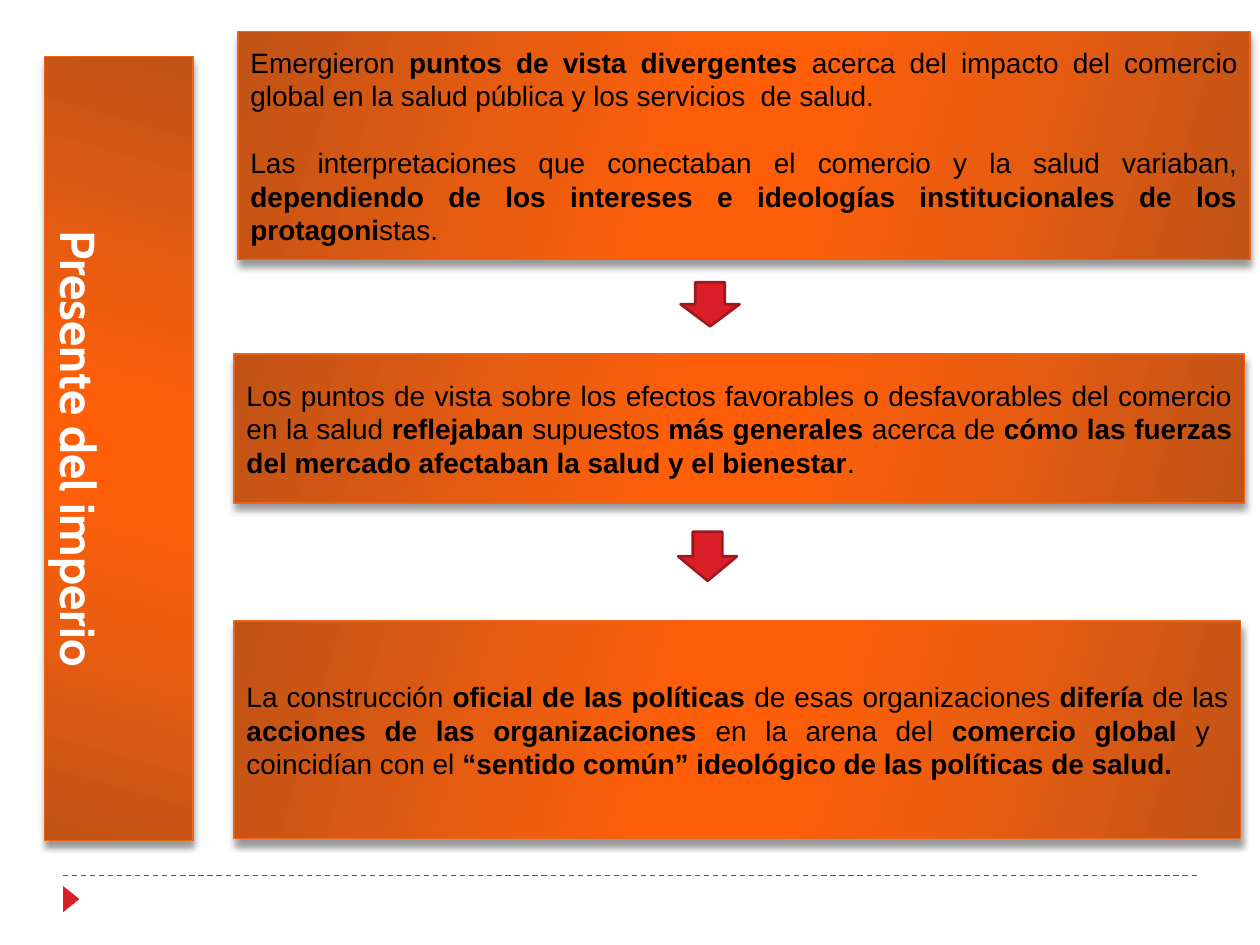
from lxml.etree import SubElement
from pptx import Presentation
from pptx.dml.color import RGBColor
from pptx.enum.dml import MSO_LINE
from pptx.enum.shapes import MSO_CONNECTOR, MSO_SHAPE
from pptx.enum.text import MSO_ANCHOR, MSO_AUTO_SIZE, PP_ALIGN
from pptx.oxml.ns import qn
from pptx.util import Cm, Pt

RED = "DA1F28"
DARK_RED = "A1171E"
ORANGE_EDGE = "EB641B"
ORANGE_STOPS = [(0, "C05216"), (30, "EA5D10"), (45, "FE5E08"),
                (55, "FE5E08"), (73, "EA5D10"), (100, "C05216")]

PANELS = [
    (4.8, 0.64, 20.4, 4.6, [
        "Emergieron **puntos de vista divergentes **acerca del impacto del comercio "
        "global en la salud pública y los servicios  de salud.",
        "Las interpretaciones que conectaban el comercio y la salud variaban, "
        "**dependiendo de los intereses e ideologías institucionales de los "
        "protagoni**stas.",
    ]),
    (4.72, 7.14, 20.37, 3, [
        "Los puntos de vista sobre los efectos favorables o desfavorables del comercio "
        "en la salud** reflejaban** supuestos **más generales **acerca de **cómo las "
        "fuerzas del mercado afectaban la salud y el bienestar**.",
    ]),
    (4.72, 12.52, 20.29, 4.39, [
        "La construcción **oficial de las políticas **de esas organizaciones "
        "**difería** de las **acciones de las organizaciones **en la arena del "
        "**comercio global **y  coincidían con el **“sentido común” ideológico de "
        "las políticas de salud.**",
    ]),
]
ARROWS = [(13.72, 5.69, 1.19, 0.89), (13.67, 10.72, 1.19, 0.99)]


def color(value):
    return RGBColor.from_string(value)


class SlideBuilder:
    def __init__(self, presentation):
        self.slide = presentation.slides.add_slide(presentation.slide_layouts[5])

    def format_run(self, run, font_name, size, font_color, bold):
        run.font.name = font_name
        run.font.size = Pt(size)
        run.font.color.rgb = color(font_color)
        run.font.bold = bold

    def style_orange(self, shape):
        shape.fill.gradient()
        shape.fill.gradient_angle = 344
        properties = shape._element.spPr
        stops = properties.find(qn("a:gradFill")).find(qn("a:gsLst"))
        stops.clear()
        for position, value in ORANGE_STOPS:
            stop = SubElement(stops, qn("a:gs"), pos=str(position * 1000))
            SubElement(stop, qn("a:srgbClr"), val=value)
        shape.line.color.rgb = color(ORANGE_EDGE)
        shape.line.width = Pt(0.75)
        shape.shadow.inherit = False
        shadow = SubElement(
            properties.find(qn("a:effectLst")), qn("a:outerShdw"),
            blurRad=str(Pt(4)), dist=str(Pt(3.4)), dir="5400000",
            algn="ctr", rotWithShape="0")
        shadow_color = SubElement(shadow, qn("a:srgbClr"), val="000000")
        SubElement(shadow_color, qn("a:alpha"), val="40000")

    def title(self, text, left, top, width, height):
        shape = self.slide.shapes.title
        shape.left, shape.top = Cm(left), Cm(top)
        shape.width, shape.height = Cm(width), Cm(height)
        shape.rotation = 90
        self.style_orange(shape)
        text_frame = shape.text_frame
        text_frame.text = text
        text_frame.auto_size = MSO_AUTO_SIZE.NONE
        text_frame.vertical_anchor = MSO_ANCHOR.BOTTOM
        paragraph = text_frame.paragraphs[0]
        paragraph.alignment = PP_ALIGN.CENTER
        self.format_run(paragraph.runs[0], "Cabin", 28, "FFFFFF", True)

    def panel(self, left, top, width, height, texts):
        shape = self.slide.shapes.add_shape(
            MSO_SHAPE.RECTANGLE, Cm(left), Cm(top), Cm(width), Cm(height))
        self.style_orange(shape)
        text_frame = shape.text_frame
        text_frame.word_wrap = True
        text_frame.vertical_anchor = MSO_ANCHOR.MIDDLE
        for number, text in enumerate(texts):
            paragraph = text_frame.add_paragraph() if number else text_frame.paragraphs[0]
            paragraph.alignment = PP_ALIGN.JUSTIFY
            paragraph.space_before = Pt(19 if number else 0)
            for index, part in enumerate(text.split("**")):
                if part:
                    run = paragraph.add_run()
                    run.text = part
                    self.format_run(run, "Arial", 16, "000000", index % 2 == 1)

    def marker(self, kind, left, top, width, height, rotation=0, edge=None):
        shape = self.slide.shapes.add_shape(
            kind, Cm(left), Cm(top), Cm(width), Cm(height))
        shape.rotation = rotation
        shape.shadow.inherit = False
        shape.fill.solid()
        shape.fill.fore_color.rgb = color(RED)
        if edge:
            shape.line.color.rgb = color(edge)
            shape.line.width = Pt(1.5)
        else:
            shape.line.fill.background()

    def dashed_rule(self, left, right, top):
        connector = self.slide.shapes.add_connector(
            MSO_CONNECTOR.STRAIGHT, Cm(left), Cm(top), Cm(right), Cm(top))
        connector.line.color.rgb = color(RED)
        connector.line.width = Pt(0.75)
        connector.line.dash_style = MSO_LINE.DASH
        SubElement(connector._element.spPr, qn("a:effectLst"))


def main():
    presentation = Presentation()
    presentation.slide_width = Cm(25.4)
    presentation.slide_height = Cm(19.05)
    builder = SlideBuilder(presentation)
    builder.dashed_rule(1.27, 24.13, 17.65)
    builder.marker(MSO_SHAPE.ISOSCELES_TRIANGLE, 1.17, 17.96, 0.53, 0.33, rotation=90)
    for panel in PANELS:
        builder.panel(*panel)
    for arrow in ARROWS:
        builder.marker(MSO_SHAPE.DOWN_ARROW, *arrow, edge=DARK_RED)
    builder.title("Presente del imperio", -5.51, 7.54, 15.8, 3)
    presentation.save("out.pptx")


if __name__ == "__main__":
    main()
